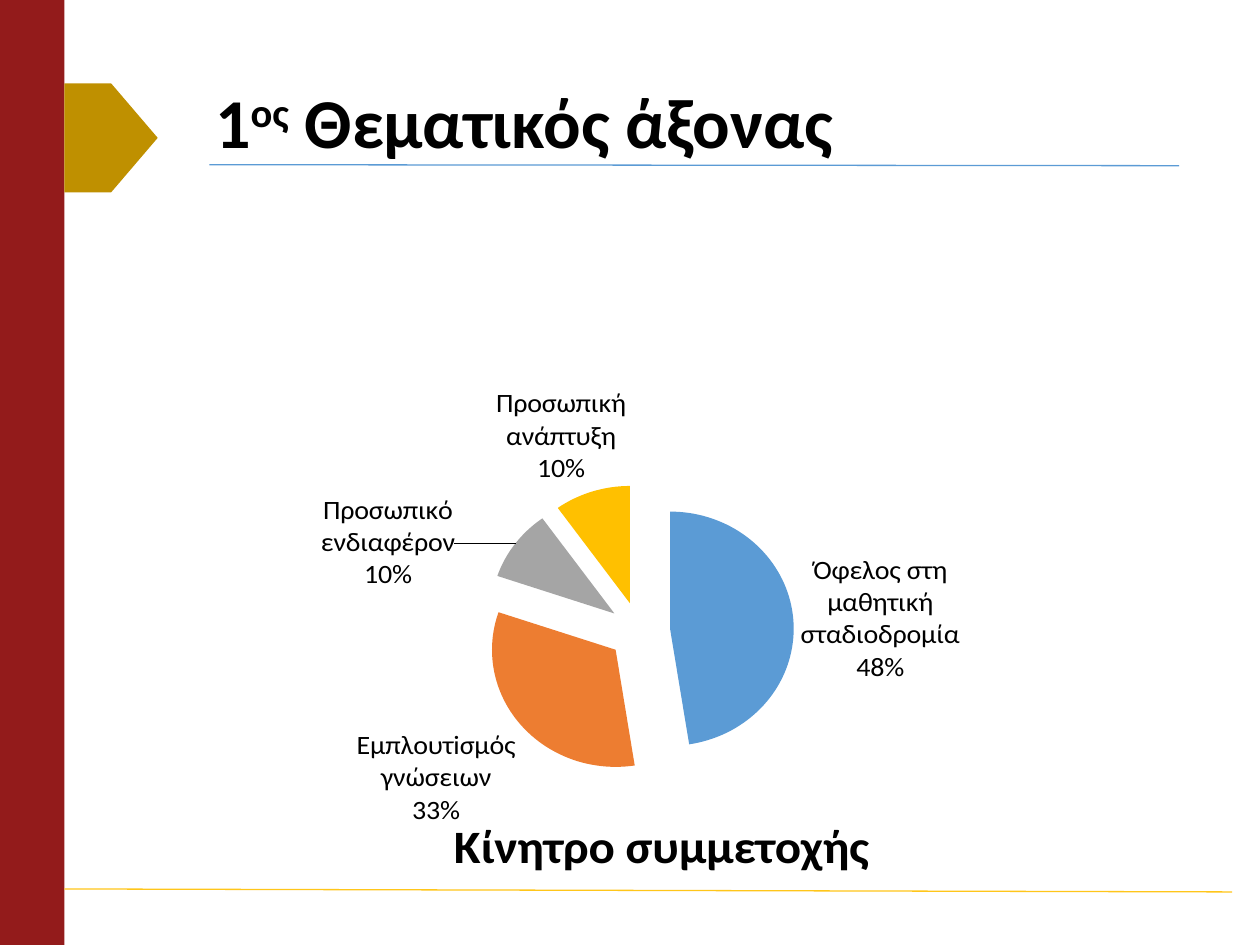
from pptx import Presentation
from pptx.chart.data import CategoryChartData as Data
from pptx.dml.color import RGBColor
from pptx.enum.chart import XL_CHART_TYPE as Kind, XL_LABEL_POSITION as Spot
from pptx.enum.shapes import MSO_CONNECTOR as Link, MSO_SHAPE as Form
from pptx.enum.text import MSO_ANCHOR as Anchor
from pptx.oxml import parse_xml
from pptx.oxml.ns import nsdecls, qn
from pptx.util import Cm, Pt


def paint(obj, tone):
    obj.solid()
    obj.fore_color.rgb = RGBColor.from_string(tone)


def layout(**parts):
    body = "".join(f'<c:{k} val="{v}"/>' for k, v in parts.items())
    return parse_xml(f'<c:layout {nsdecls("c")}><c:manualLayout>{body}</c:manualLayout></c:layout>')


deck = Presentation()
deck.slide_width, deck.slide_height = Cm(25.4), Cm(19.05)
slide = deck.slides.add_slide(deck.slide_layouts[6])
shapes = slide.shapes

for form, x, y, w, h, tone in [
    (Form.RECTANGLE, 0, 0, 1.3, 19.05, "931B1B"),
    (Form.PENTAGON, 1.3, 1.68, 1.88, 2.2, "BF9000"),
]:
    shape = shapes.add_shape(form, Cm(x), Cm(y), Cm(w), Cm(h))
    shape.shadow.inherit = False
    paint(shape.fill, tone)
    shape.line.fill.background()

for x, y, end, drop, tone in [
    (4.22, 3.32, 23.77, 3.34, "5B9BD5"),
    (1.3, 17.92, 24.84, 17.98, "FFC61A"),
]:
    rule = shapes.add_connector(Link.STRAIGHT, Cm(x), Cm(y), Cm(end), Cm(drop))
    paint(rule.line.fill, tone)
    rule.line.width = Pt(0.75)
    rule._element.spPr.append(parse_xml(f'<a:effectLst {nsdecls("a")}/>'))

frame = shapes.add_textbox(Cm(4.09), Cm(1.73), Cm(18.6), Cm(1.6)).text_frame
frame.word_wrap = True
frame.vertical_anchor = Anchor.MIDDLE
head = frame.paragraphs[0]
head.line_spacing = 0.9
head.font.name, head.font.size, head.font.bold = "Calibri", Pt(40), True
head.font.color.rgb = RGBColor.from_string("000000")
for text, base in [("1", 0), ("ος", 30000), (" Θεματικός άξονας", 0)]:
    run = head.add_run()
    run.text = text
    if base:
        run.font._element.set("baseline", str(base))

data = Data()
data.categories = [
    "Όφελος στη μαθητική σταδιοδρομία",
    "Εμπλουτiσμός γνώσειων",
    "Προσωπικό ενδιαφέρον",
    "Προσωπική ανάπτυξη",
]
data.add_series("Series 1", (48, 33, 10, 10))
chart = shapes.add_chart(Kind.PIE_EXPLODED, Cm(3.51), Cm(5.72), Cm(18.21), Cm(12.22), data).chart
chart.has_legend = False
chart.font.name, chart.font.size = "Calibri", Pt(10)
chart.font.color.rgb = RGBColor.from_string("000000")

chart.has_title = True
title = chart.chart_title
title.include_in_layout = False
title.text_frame.text = "Κίνητρο συμμετοχής"
font = title.text_frame.paragraphs[0].font
font.name, font.size, font.bold = "Calibri", Pt(28), True
font.color.rgb = RGBColor.from_string("000000")
for old in title._element.findall(qn("c:layout")):
    title._element.remove(old)
title._element.find(qn("c:tx")).addnext(layout(xMode="edge", yMode="edge", x=0.3, y=0.91))

area = chart._chartSpace.chart.plotArea
for old in area.findall(qn("c:layout")):
    area.remove(old)
area.insert(0, layout(layoutTarget="inner", xMode="edge", yMode="edge", x=0.34, y=0.35, w=0.35, h=0.51))

plot = chart.plots[0]
plot.vary_by_categories = True
pie = plot.series[0]
for blast in pie._element.findall(qn("c:explosion")):
    blast.set("val", "25")
for i, tone in enumerate(["5B9BD5", "ED7D31", "A5A5A5", "FFC000"]):
    paint(pie.points[i].format.fill, tone)

tags = pie.data_labels
tags.show_value = False
tags.show_category_name = tags.show_percentage = True
tags.position = Spot.OUTSIDE_END
groups = [tags]
for i, x, y in [(2, -0.06, 0.09), (3, 0.04, 0)]:
    moved = pie.points[i].data_label
    moved.position = Spot.OUTSIDE_END
    groups.append(moved)
    tag = moved._dLbl
    for name, flag in [("showVal", 0), ("showCatName", 1), ("showPercent", 1)]:
        tag.find(qn(f"c:{name}")).set("val", str(flag))
    tag.find(qn("c:idx")).addnext(layout(x=x, y=y))

for item in groups:
    item.font.name, item.font.size = "Calibri", Pt(16)
    item.font.color.rgb = RGBColor.from_string("000000")
    node = tags._element if item is tags else item._dLbl
    for old in node.findall(qn("c:separator")):
        node.remove(old)
    mark = parse_xml(f'<c:separator {nsdecls("c")}>\n</c:separator>')
    node.find(qn("c:showBubbleSize")).addnext(mark)
for old in tags._element.findall(qn("c:showLeaderLines")):
    tags._element.remove(old)
lead = parse_xml(f'<c:showLeaderLines {nsdecls("c")} val="1"/>')
tags._element.find(qn("c:separator")).addnext(lead)

deck.save("out.pptx")
